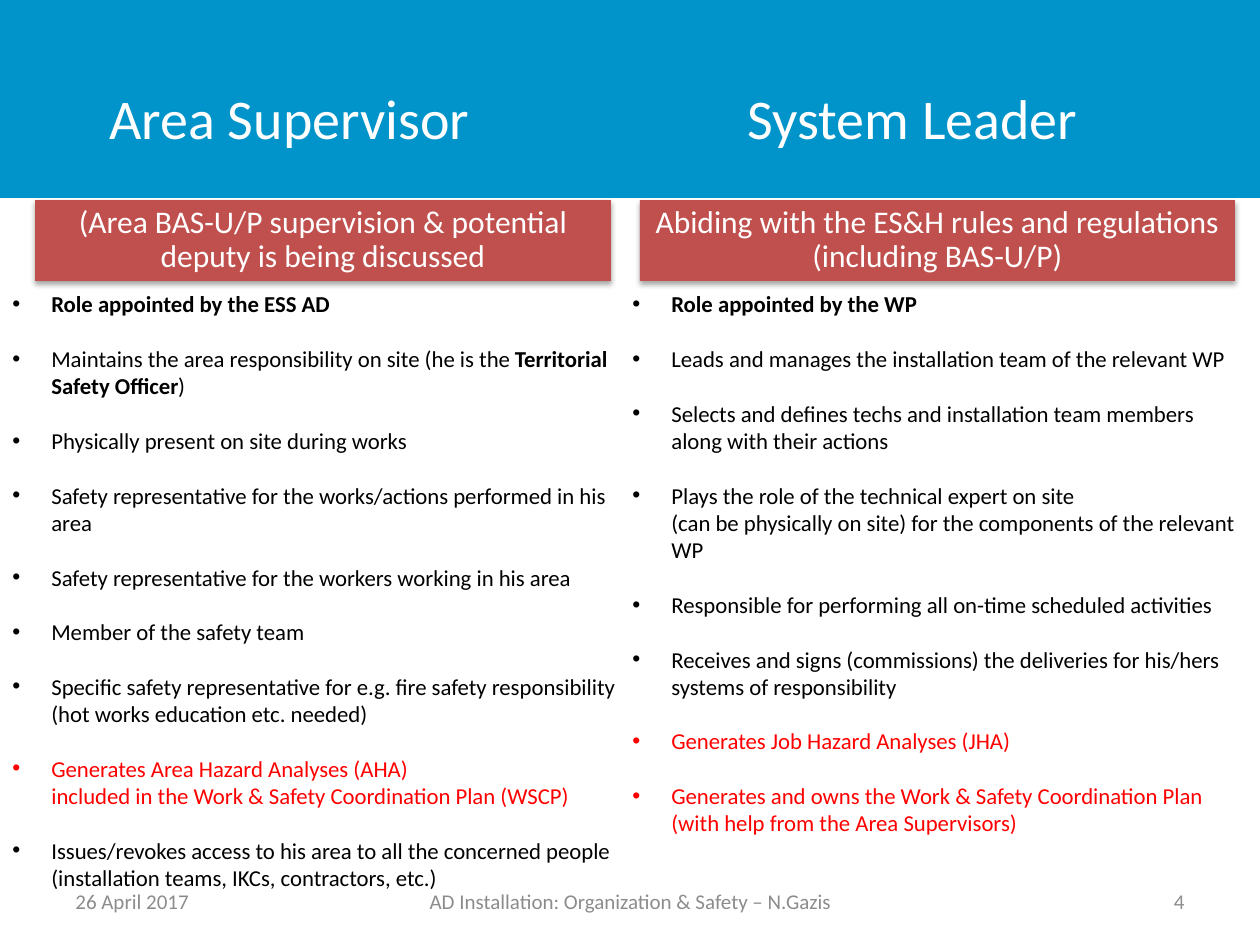
from lxml import etree
from pptx import Presentation
from pptx import util as u
from pptx.dml.color import RGBColor
from pptx.enum import shapes, text
from pptx.oxml import ns, parse_xml

PX = 914400 // 126
FONT = "Calibri"
WHITE, BLACK, RED, GREY = "FFFFFF", "000000", "FF0000", "8C8C8C"
BLUE, BRICK = "0094CA", "C0504D"
LIST_SIZE, LIST_GAP, LIST_INDENT = 13, 15.6, 39

SUPERVISOR_DUTIES = [
    ("**Role appointed by the ESS AD**", BLACK),
    ("Maintains the area responsibility on site (he is the **Territorial Safety Officer**)", BLACK),
    ("Physically present on site during works", BLACK),
    ("Safety representative for the works/actions performed in his area", BLACK),
    ("Safety representative for the workers working in his area", BLACK),
    ("Member of the safety team", BLACK),
    ("Specific safety representative for e.g. fire safety responsibility "
     "(hot works education etc. needed)", BLACK),
    ("Generates Area Hazard Analyses (AHA) \n"
     "included in the Work & Safety Coordination Plan (WSCP)", RED),
    ("Issues/revokes access to his area to all the concerned people \n"
     "(installation teams, IKCs, contractors, etc.)", BLACK),
]
LEADER_DUTIES = [
    ("**Role appointed by the WP**", BLACK),
    ("Leads and manages the installation team of the relevant WP", BLACK),
    ("Selects and defines techs and installation team members along with their actions", BLACK),
    ("Plays the role of the technical expert on site \n"
     "(can be physically on site) for the components of the relevant WP", BLACK),
    ("Responsible for performing all on-time scheduled activities", BLACK),
    ("Receives and signs (commissions) the deliveries for his/hers systems of responsibility", BLACK),
    ("Generates Job Hazard Analyses (JHA)", RED),
    ("Generates and owns the Work & Safety Coordination Plan \n"
     "(with help from the Area Supervisors)", RED),
]


def px(*lengths):
    """Turn pixel lengths into EMU."""
    return [u.Emu(length * PX) for length in lengths]


def color(value):
    """Turn a hex string into a colour."""
    return RGBColor.from_string(value)


def style(font, size, hue, bold=False):
    """Set the face, size, colour and weight of a font."""
    font.name, font.size, font.bold = FONT, u.Pt(size), bold
    font.color.rgb = color(hue)


def add_block(slide, box, fill):
    """Add a plain filled rectangle."""
    block = slide.shapes.add_shape(shapes.MSO_SHAPE.RECTANGLE, *px(*box))
    block.shadow.inherit = False
    block.fill.solid()
    block.fill.fore_color.rgb = color(fill)
    block.line.fill.background()
    return block


def add_band(slide, box, caption):
    """Add a shadowed band with a centred caption."""
    band = add_block(slide, box, BRICK)
    effects = band._element.spPr.find(ns.qn("a:effectLst"))
    effects.append(parse_xml(
        f'<a:outerShdw {ns.nsdecls("a")} blurRad="39370" dist="22860" dir="5400000" rotWithShape="0">'
        '<a:srgbClr val="000000"><a:alpha val="35000"/></a:srgbClr></a:outerShdw>'))
    frame = band.text_frame
    frame.margin_left = frame.margin_right = frame.margin_top = frame.margin_bottom = 0
    frame.vertical_anchor = text.MSO_ANCHOR.MIDDLE
    frame.text = caption
    paragraph = frame.paragraphs[0]
    paragraph.alignment = text.PP_ALIGN.CENTER
    paragraph.line_spacing = 0.9
    style(paragraph.runs[0].font, 18, WHITE)


def add_label(slide, box, wording, size, hue, align=text.PP_ALIGN.LEFT, tabs=()):
    """Add one line of text, centred vertically in its box."""
    frame = slide.shapes.add_textbox(*px(*box)).text_frame
    frame.word_wrap = True
    frame.vertical_anchor = text.MSO_ANCHOR.MIDDLE
    frame.text = wording
    paragraph = frame.paragraphs[0]
    paragraph.alignment = align
    if tabs:
        stops = etree.SubElement(paragraph._p.get_or_add_pPr(), ns.qn("a:tabLst"))
        for stop in px(*tabs):
            etree.SubElement(stops, ns.qn("a:tab"), pos=str(stop), algn="l")
    style(paragraph.runs[0].font, size, hue)


def add_bullet(paragraph):
    """Give a paragraph a hanging bullet."""
    indent, = px(LIST_INDENT)
    properties = paragraph._p.get_or_add_pPr()
    properties.set("marL", str(indent))
    properties.set("indent", str(-indent))
    etree.SubElement(properties, ns.qn("a:buFont"), typeface="Arial")
    etree.SubElement(properties, ns.qn("a:buChar"), char="•")


def add_duties(slide, box, duties):
    """Add a bulleted list in which ** encloses bold words."""
    frame = slide.shapes.add_textbox(*px(*box)).text_frame
    frame.word_wrap = True
    for number, (duty, hue) in enumerate(duties):
        paragraph = frame.add_paragraph() if number else frame.paragraphs[0]
        add_bullet(paragraph)
        if number:
            paragraph.space_before = u.Pt(LIST_GAP)
        for row, line in enumerate(duty.split("\n")):
            if row:
                paragraph.add_line_break()
                line_break = paragraph._p.findall(ns.qn("a:br"))[-1]
                etree.SubElement(line_break, ns.qn("a:rPr"), sz=str(LIST_SIZE * 100))
            for part, words in enumerate(line.split("**")):
                if words:
                    run = paragraph.add_run()
                    run.text = words
                    style(run.font, LIST_SIZE, hue, bold=part % 2 == 1)


def main():
    """Build the slide and save it."""
    deck = Presentation()
    deck.slide_width, deck.slide_height = px(1260, 945)
    slide = deck.slides.add_slide(deck.slide_layouts[6])

    add_block(slide, (0, 0, 1260, 198), BLUE)
    add_label(slide, (35, 38, 1191, 158), "\tArea Supervisor\tSystem Leader", 32, WHITE, tabs=(62, 700))

    add_duties(slide, (0, 284, 630, 619), SUPERVISOR_DUTIES)
    add_band(slide, (35, 200, 576, 81), "(Area BAS-U/P supervision & potential deputy is being discussed")
    add_band(slide, (640, 200, 595, 81), "Abiding with the ES&H rules and regulations (including BAS-U/P)")
    add_duties(slide, (620, 284, 640, 564), LEADER_DUTIES)

    for left, width, wording, align in [
        (63, 294, "26 April 2017", text.PP_ALIGN.LEFT),
        (333, 595, "AD Installation: Organization & Safety – N.Gazis", text.PP_ALIGN.CENTER),
        (903, 294, "4", text.PP_ALIGN.RIGHT),
    ]:
        add_label(slide, (left, 876, width, 50), wording, 12, GREY, align)

    deck.save("out.pptx")


if __name__ == "__main__":
    main()
